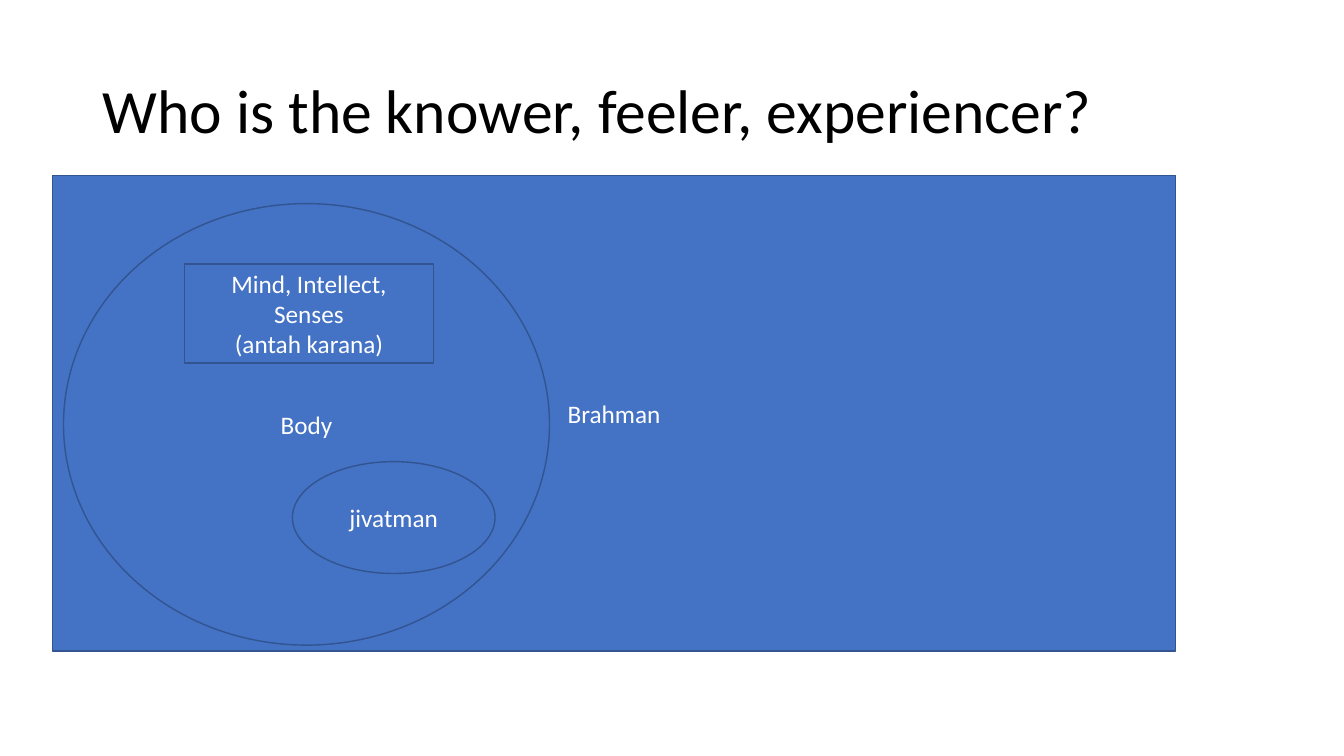
from pptx import Presentation
from pptx.dml.color import RGBColor
from pptx.enum.shapes import MSO_SHAPE as Shape
from pptx.enum.text import MSO_ANCHOR as Anchor, PP_ALIGN as Align
from pptx.util import Inches, Pt


def style_font(font, size, color):
    font.name = "Calibri"
    font.size = Pt(size)
    font.color.rgb = RGBColor.from_string(color)


deck = Presentation()
deck.slide_width = Inches(13.33)
deck.slide_height = Inches(7.5)
page = deck.slides.add_slide(deck.slide_layouts[5])

title = page.shapes.title
title.left, title.top = Inches(0.92), Inches(0.4)
title.width, title.height = Inches(11.5), Inches(1.45)
title.text_frame.text = "Who is the knower, feeler, experiencer?"
title.text_frame.vertical_anchor = Anchor.MIDDLE
heading = title.text_frame.paragraphs[0]
heading.alignment = Align.LEFT
heading.line_spacing = 0.9
style_font(heading.font, 44, "000000")

layers = [
    (Shape.RECTANGLE, 0.52, 1.74, 11.14, 4.72, "Brahman"),
    (Shape.OVAL, 0.63, 2.02, 4.82, 4.38, "Body"),
    (Shape.RECTANGLE, 1.83, 2.62, 2.47, 0.98, "Mind, Intellect, Senses\n(antah karana)"),
    (Shape.OVAL, 2.9, 4.58, 2.01, 1.11, "jivatman"),
]
for kind, left, top, width, height, label in layers:
    box = page.shapes.add_shape(kind, Inches(left), Inches(top), Inches(width), Inches(height))
    box.shadow.inherit = False
    box.fill.solid()
    box.fill.fore_color.rgb = RGBColor.from_string("4472C4")
    box.line.color.rgb = RGBColor.from_string("325491")
    box.line.width = Pt(1)
    frame = box.text_frame
    frame.word_wrap = True
    frame.vertical_anchor = Anchor.MIDDLE
    frame.text = label
    for para in frame.paragraphs:
        para.alignment = Align.CENTER
        style_font(para.font, 18, "FFFFFF")

deck.save("out.pptx")
